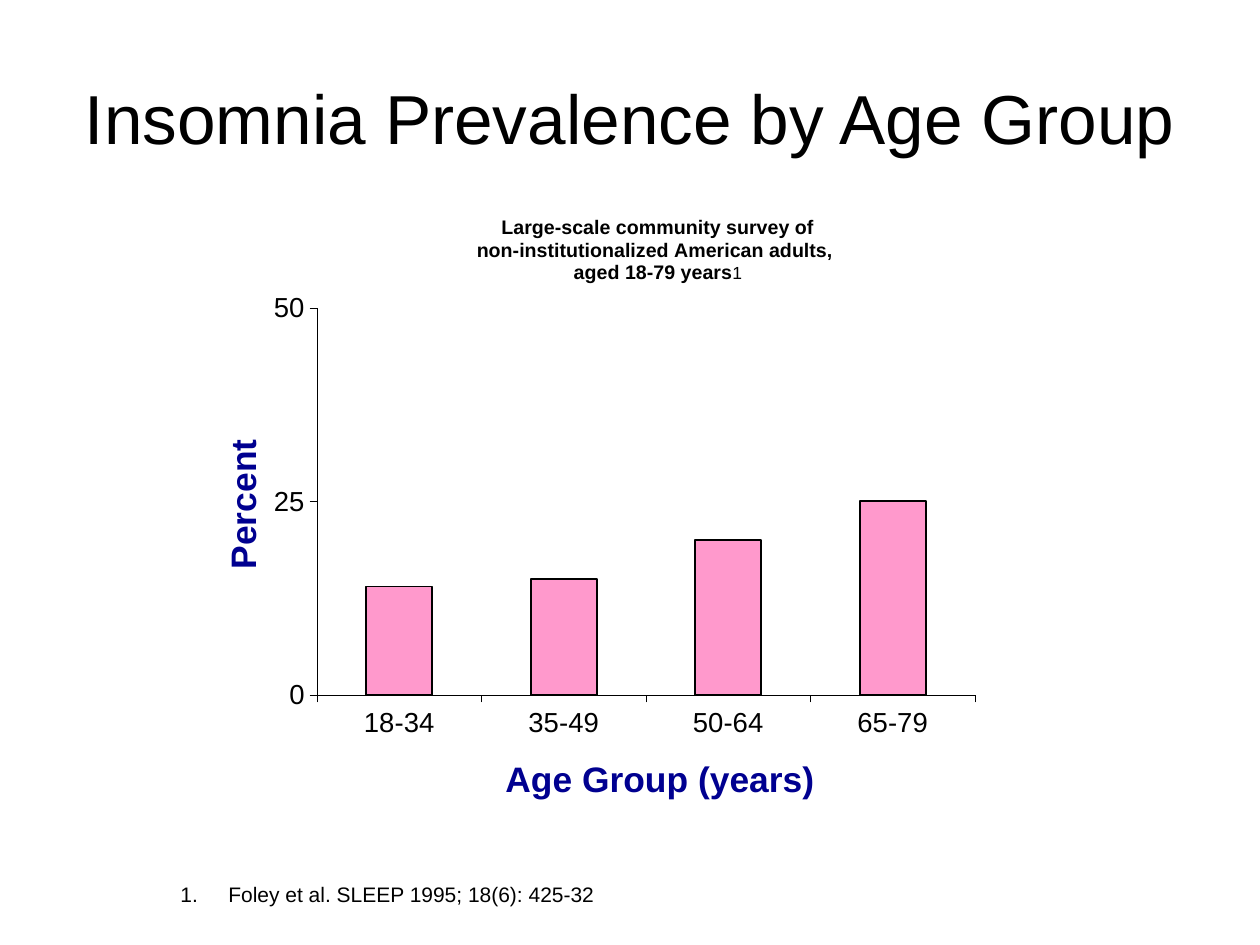
from dataclasses import dataclass

from lxml.etree import SubElement
from pptx import Presentation
from pptx.chart.data import CategoryChartData
from pptx.dml.color import RGBColor
from pptx.enum.chart import XL_CHART_TYPE, XL_TICK_MARK
from pptx.enum.text import MSO_ANCHOR, PP_ALIGN
from pptx.oxml.ns import qn
from pptx.util import Emu, Pt

BLACK, NAVY, PINK = "000000", "000090", "FF99CC"


@dataclass
class Run:
    text: str
    size: float
    color: str = BLACK
    bold: bool = False


@dataclass
class Box:
    left: int
    top: int
    width: int
    height: int


CHART = Box(196, 206, 930, 616)


def px(n: int) -> Emu:
    return Emu(round(n * 914400 / 126))


def rgb(code: str) -> RGBColor:
    return RGBColor.from_string(code)


def style(font, size: float, color: str = BLACK, bold: bool = False) -> None:
    font.name = "Arial"
    font.size = Pt(size)
    font.bold = bold
    font.color.rgb = rgb(color)


def add_run(para, item: Run) -> None:
    run = para.add_run()
    run.text = item.text
    style(run.font, item.size, item.color, item.bold)


def add_text(slide, box: Box, item: Run, anchor=MSO_ANCHOR.TOP):
    shape = slide.shapes.add_textbox(
        px(box.left), px(box.top), px(box.width), px(box.height))
    frame = shape.text_frame
    frame.word_wrap = True
    frame.vertical_anchor = anchor
    para = frame.paragraphs[0]
    add_run(para, item)
    return para


def place(node, x: int, y: int, w: int = 0, h: int = 0) -> None:
    """Set a chart part's place, in px from the chart's corner."""
    for old in node.findall(qn("c:layout")):
        node.remove(old)
    layout = SubElement(node, qn("c:layout"))
    manual = SubElement(layout, qn("c:manualLayout"))
    spot = {"layoutTarget": "inner"} if w else {}
    spot |= {"xMode": "edge", "yMode": "edge",
             "x": x / CHART.width, "y": y / CHART.height}
    if w:
        spot |= {"w": w / CHART.width, "h": h / CHART.height}
    for key, val in spot.items():
        SubElement(manual, qn(f"c:{key}")).set("val", str(val))
    text = node.find(qn("c:tx"))
    node.insert(0 if text is None else node.index(text) + 1, layout)


def add_title(title, lines: list[list[Run]], x: int, y: int) -> None:
    frame = title.text_frame
    for i, line in enumerate(lines):
        para = frame.add_paragraph() if i else frame.paragraphs[0]
        for item in line:
            add_run(para, item)
    place(title.element, x, y)


def set_axis(axis, name: str, x: int, y: int) -> None:
    axis.has_major_gridlines = False
    axis.major_tick_mark = XL_TICK_MARK.OUTSIDE
    axis.minor_tick_mark = XL_TICK_MARK.NONE
    axis.format.line.color.rgb = rgb(BLACK)
    axis.format.line.width = Pt(0.28)
    style(axis.tick_labels.font, 15.7)
    add_title(axis.axis_title, [[Run(name, 20.2, NAVY, True)]], x, y)


def add_bars(slide) -> None:
    data = CategoryChartData()
    data.categories = ["18-34", "35-49", "50-64", "65-79"]
    data.add_series("Series 1", [14, 15, 20, 25])
    chart = slide.shapes.add_chart(
        XL_CHART_TYPE.COLUMN_CLUSTERED, px(CHART.left), px(CHART.top),
        px(CHART.width), px(CHART.height), data).chart
    style(chart.font, 21.6, bold=True)
    chart.has_legend = False

    # Heading and plot area
    head = [
        [Run("Large-scale community survey of", 11.2, bold=True)],
        [Run("non-institutionalized American adults, ", 11.2, bold=True)],
        [Run("aged 18-79 years", 11.2, bold=True), Run("1", 10)],
    ]
    add_title(chart.chart_title, head, 277, 4)
    place(chart.element.find(f".//{qn('c:plotArea')}"), 121, 102, 658, 387)

    # Axes
    set_axis(chart.category_axis, "Age Group (years)", 303, 544)
    value = chart.value_axis
    set_axis(value, "Percent", 18, 227)
    body = value.axis_title.text_frame._txBody.find(qn("a:bodyPr"))
    body.set("rot", "-5400000")
    body.set("vert", "horz")
    value.minimum_scale, value.maximum_scale, value.major_unit = 0, 50, 25

    # Columns
    plot = chart.plots[0]
    plot.gap_width = 150
    plot.vary_by_categories = False
    form = plot.series[0].format
    form.fill.solid()
    form.fill.fore_color.rgb = rgb(PINK)
    form.line.color.rgb = rgb(BLACK)
    form.line.width = Pt(1.12)


def main() -> None:
    deck = Presentation()
    deck.slide_width, deck.slide_height = px(1260), px(945)
    slide = deck.slides.add_slide(deck.slide_layouts[6])

    # Title
    para = add_text(slide, Box(63, 38, 1134, 157),
                    Run("Insomnia Prevalence by Age Group", 39.6),
                    MSO_ANCHOR.MIDDLE)
    para.alignment = PP_ALIGN.CENTER

    # Chart
    add_bars(slide)

    # Reference with a hanging indent
    para = add_text(slide, Box(168, 875, 895, 38),
                    Run("1.\tFoley et al. SLEEP 1995; 18(6): 425-32", 12))
    props = para._p.get_or_add_pPr()
    props.set("marL", str(px(48)))
    props.set("indent", str(px(-48)))

    deck.save("out.pptx")


if __name__ == "__main__":
    main()
